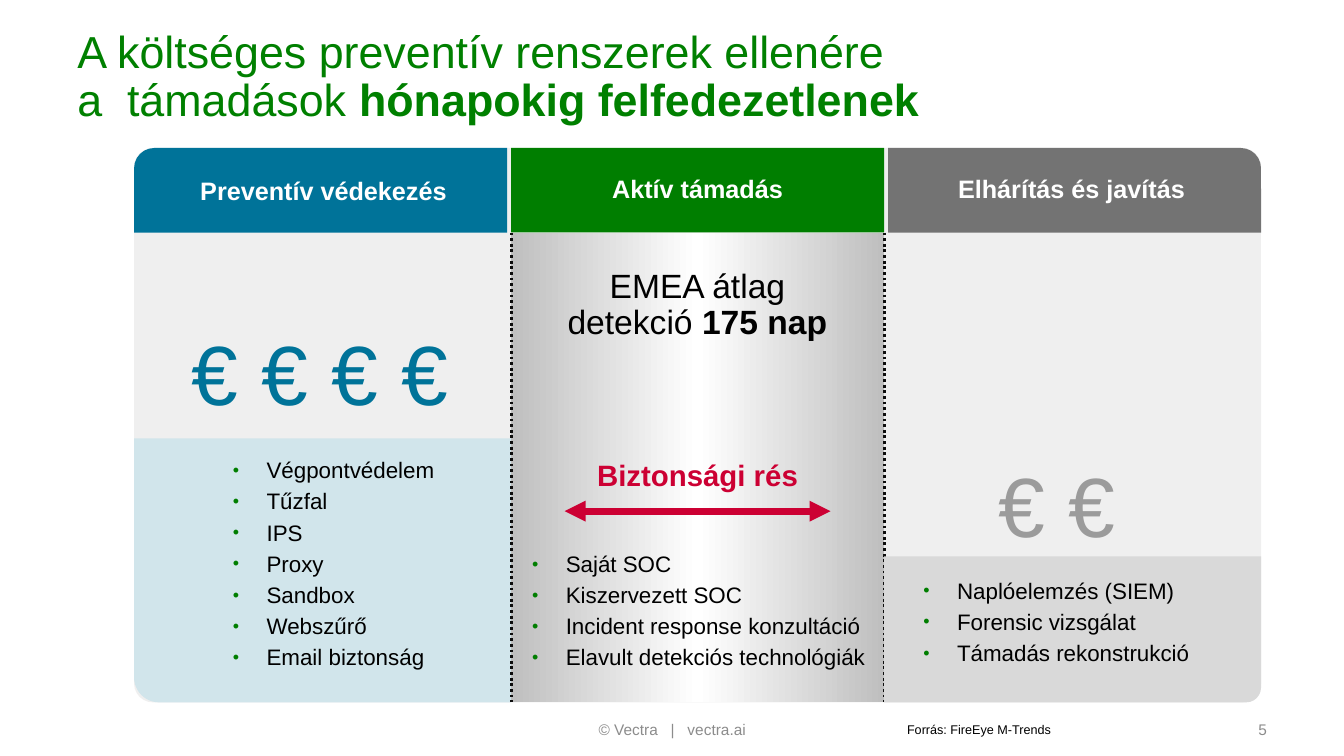
from pptx import Presentation
from pptx.dml.color import RGBColor
from pptx.enum.dml import MSO_LINE
from pptx.enum.shapes import MSO_CONNECTOR, MSO_SHAPE
from pptx.enum.text import MSO_ANCHOR, PP_ALIGN
from pptx.oxml.ns import qn
from pptx.util import Cm, Pt
from lxml import etree
from copy import deepcopy

LEFT, CENTER, RIGHT = PP_ALIGN.LEFT, PP_ALIGN.CENTER, PP_ALIGN.RIGHT
TOP, MIDDLE = MSO_ANCHOR.TOP, MSO_ANCHOR.MIDDLE
RECT, ROUND = MSO_SHAPE.RECTANGLE, MSO_SHAPE.ROUNDED_RECTANGLE
ROUND_ONE = MSO_SHAPE.ROUND_1_RECTANGLE
STRAIGHT, DOTTED = MSO_CONNECTOR.STRAIGHT, MSO_LINE.ROUND_DOT

GREEN, BLUE, GRAY, RED = "007E00", "007399", "737373", "CC0033"
BLACK, WHITE, SILVER = "000000", "FFFFFF", "D9D9D9"
HEADER_H = 2.13
GAP = 0.1


def rgb(color):
    return RGBColor.from_string(color)


def sub(parent, tag, **attrs):
    return etree.SubElement(parent, qn(tag), attrs)


def style(p, size, color, bold=False, align=LEFT, spacing=0.9):
    p.alignment = align
    p.line_spacing = spacing
    for r in p.runs:
        r.font.name = "Arial"
        r.font.size = Pt(size)
        r.font.bold = bold
        r.font.color.rgb = rgb(color)


def set_frame(tf, anchor=TOP, inset=True, wrap=True):
    tf.word_wrap = wrap
    tf.vertical_anchor = anchor
    tf.margin_left = tf.margin_right = Cm(0.25 if inset else 0)
    tf.margin_top = tf.margin_bottom = Cm(0.13 if inset else 0)


def add_text(slide, box, text, size, color, bold_tail="", bold=False,
             align=LEFT, spacing=0.9, **frame):
    s = slide.shapes.add_textbox(*map(Cm, box))
    set_frame(s.text_frame, **frame)
    p = s.text_frame.paragraphs[0]
    p.text = text
    if bold_tail:
        p.add_run().text = bold_tail
    style(p, size, color, bold, align, spacing)
    if bold_tail:
        p.runs[-1].font.bold = True


def add_bullets(slide, box, items):
    s = slide.shapes.add_textbox(*map(Cm, box))
    tf = s.text_frame
    set_frame(tf, inset=False)
    tf.text = "\n".join(items)
    for i, p in enumerate(tf.paragraphs):
        style(p, 16, BLACK)
        if i:
            p.space_before = Pt(5)
        pPr = p._p.get_or_add_pPr()
        pPr.set("marL", str(Cm(0.85)))
        pPr.set("indent", str(-Cm(0.85)))
        sub(sub(pPr, "a:buClr"), "a:srgbClr", val=GREEN)
        sub(pPr, "a:buSzPct", val="80000")
        sub(pPr, "a:buFont", typeface="Arial")
        sub(pPr, "a:buChar", char="•")


def add_block(slide, box, color, kind=RECT, radius=None, flips=()):
    s = slide.shapes.add_shape(kind, *map(Cm, box))
    s.shadow.inherit = False
    s.line.fill.background()
    s.fill.solid()
    s.fill.fore_color.rgb = rgb(color)
    if radius:
        s.adjustments[0] = radius
    for flip in flips:
        s._element.spPr.find(qn("a:xfrm")).set(flip, "1")
    return s


def add_line(slide, x1, y1, x2, y2, color, width, dash=None, arrows=False):
    s = slide.shapes.add_connector(STRAIGHT, Cm(x1), Cm(y1), Cm(x2), Cm(y2))
    s.line.color.rgb = rgb(color)
    s.line.width = Pt(width)
    if dash:
        s.line.dash_style = dash
    if arrows:
        ln = s.line._get_or_add_ln()
        sub(ln, "a:headEnd", type="triangle")
        sub(ln, "a:tailEnd", type="triangle")
    sub(s._element.spPr, "a:effectLst")


def add_header(slide, x, y, w, text, color, kind=RECT, flips=(), spacing=0.9):
    radius = 0.239 if kind == ROUND_ONE else None
    s = add_block(slide, (x, y, w, HEADER_H), color, kind, radius, flips)
    set_frame(s.text_frame, MIDDLE, inset=False)
    s.text_frame.text = text
    style(s.text_frame.paragraphs[0], 18, WHITE, True, CENTER, spacing)


def add_backdrop(slide, x, y, w, h):
    s = add_block(slide, (x, y, w, h), SILVER, ROUND, 0.034, ["flipH"])
    sub(s._element.spPr.find(".//" + qn("a:srgbClr")), "a:alpha", val="40000")


def add_prevention(slide, x, y, w, h):
    add_block(slide, (x, y + 7.32, w + GAP, h - 7.32), "D1E5EB", ROUND_ONE,
              0.095, ["flipH", "flipV"])
    add_header(slide, x, y, w, "Preventív védekezés", BLUE, ROUND_ONE,
               ["flipH"], 1.0)
    add_text(slide, (x + 0.96, y + 4.73, 6.96, 2.13), "€ € € €", 60, BLUE,
             align=RIGHT, anchor=MIDDLE, inset=False)
    add_bullets(slide, (x + 2.49, y + 7.85, 5.08, 5.89),
                ["Végpontvédelem", "Tűzfal", "IPS", "Proxy", "Sandbox",
                 "Webszűrő", "Email biztonság"])


def add_attack(slide, x, y, w, h):
    s = add_block(slide, (x, y + HEADER_H, w, h - HEADER_H), WHITE)
    s.fill.gradient()
    s.fill.gradient_angle = 0
    first = s.fill.gradient_stops[0]._gs
    first.addnext(deepcopy(first))
    for stop, position, color in zip(s.fill.gradient_stops, (0, 0.5, 1),
                                     ("BFBFBF", WHITE, "BFBFBF")):
        stop.position = position
        stop.color.rgb = rgb(color)
    add_header(slide, x, y, w, "Aktív támadás", GREEN)
    add_text(slide, (x + 1, y + 2.92, 7.39, 2.11), "EMEA átlag detekció ", 24,
             BLACK, bold_tail="175 nap", align=CENTER)
    add_text(slide, (x + 1.7, y + 7.67, 6, 1.17), "Biztonsági rés", 21, RED,
             bold=True, align=CENTER, spacing=1.0)
    add_line(slide, x + 1.35, y + 9.15, x + 8.05, y + 9.15, RED, 5, arrows=True)
    add_bullets(slide, (x + 0.53, y + 10.21, 8.64, 3.53),
                ["Saját SOC", "Kiszervezett SOC",
                 "Incident response konzultáció",
                 "Elavult detekciós technológiák"])
    for edge in (x, x + w):
        add_line(slide, edge, y + HEADER_H, edge, y + h, "0D0D0D", 2, DOTTED)


def add_recovery(slide, x, y, w, h):
    add_block(slide, (x - GAP, y + 10.29, w + GAP, h - 10.29), SILVER,
              ROUND_ONE, 0.101, ["flipV"])
    add_header(slide, x, y, w, "Elhárítás és javítás", GRAY, ROUND_ONE)
    add_text(slide, (x + 1.06, y + 8.06, 6.38, 2.13), "€ €", 60, "9B9B9B",
             align=CENTER, anchor=MIDDLE, inset=False)
    add_bullets(slide, (x + 0.89, y + 10.88, 7.9, 2.39),
                ["Naplóelemzés (SIEM)", "Forensic vizsgálat",
                 "Támadás rekonstrukció"])


def add_footer(slide, y):
    for x, w, text, align in ((14.81, 4.27, "© Vectra   |   vectra.ai", CENTER),
                              (31.19, 0.99, "5", RIGHT)):
        add_text(slide, (x, y, w, 0.74), text, 11, "8C8C8C", align=align,
                 spacing=1.0, wrap=False)
    add_text(slide, (22.61, y + 0.05, 4.19, 0.66), "Forrás: FireEye M-Trends",
             9, BLACK, spacing=1.0, wrap=False)


def main():
    prs = Presentation()
    prs.slide_width, prs.slide_height = Cm(33.87), Cm(19.05)
    slide = prs.slides.add_slide(prs.slide_layouts[6])
    add_text(slide, (1.7, 0.13, 30.45, 3.68),
             "A költséges preventív renszerek ellenére\va  támadások ", 32,
             "008000", bold_tail="hónapokig felfedezetlenek", anchor=MIDDLE)
    x, y, w, h = 3.38, 3.73, 28.4, 13.97
    column_w = (w - 2 * GAP) / 3
    add_backdrop(slide, x, y, w, h)
    for i, add_column in enumerate((add_prevention, add_attack, add_recovery)):
        add_column(slide, x + i * (column_w + GAP), y, column_w, h)
    add_footer(slide, 18.01)
    prs.save("out.pptx")


if __name__ == "__main__":
    main()
